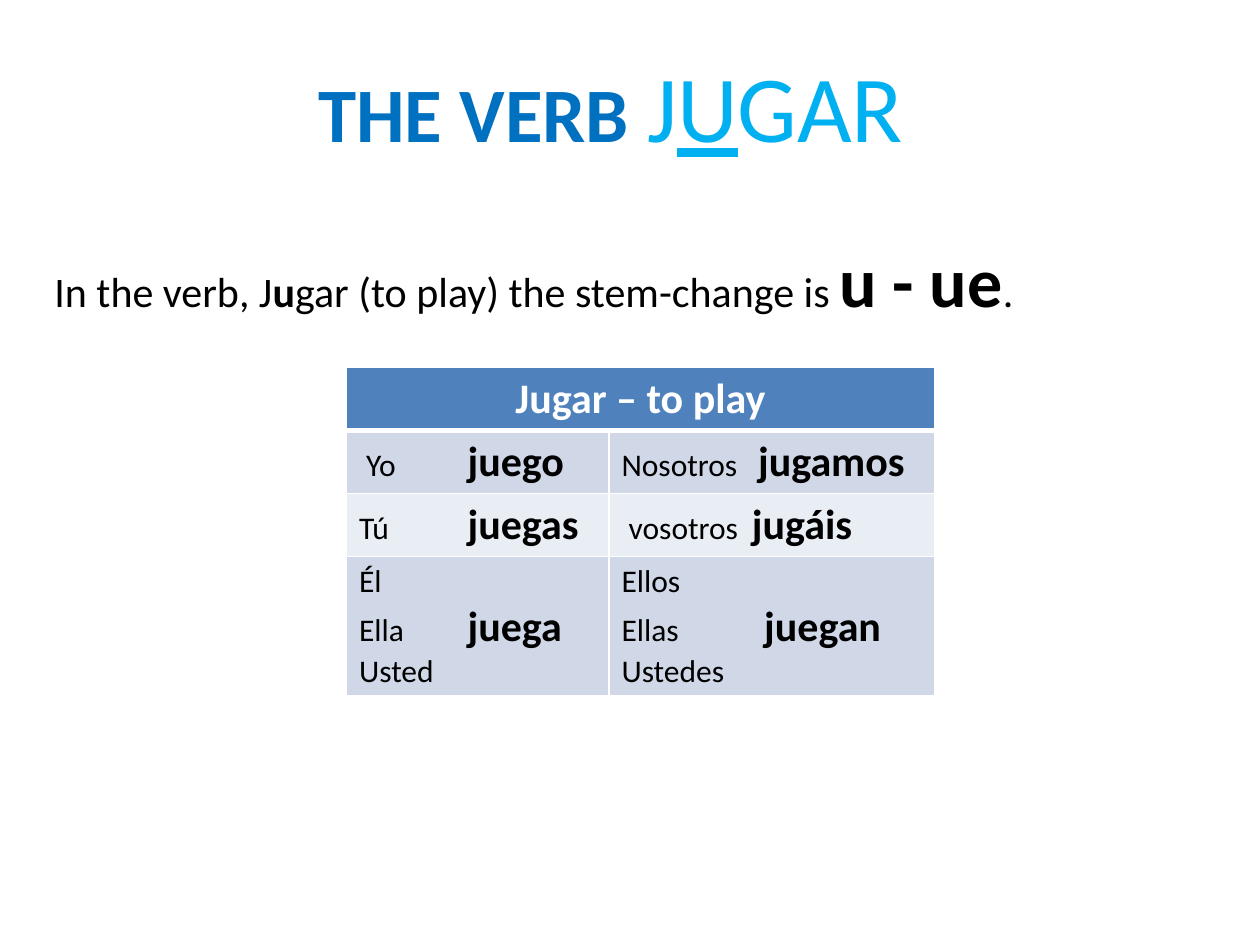
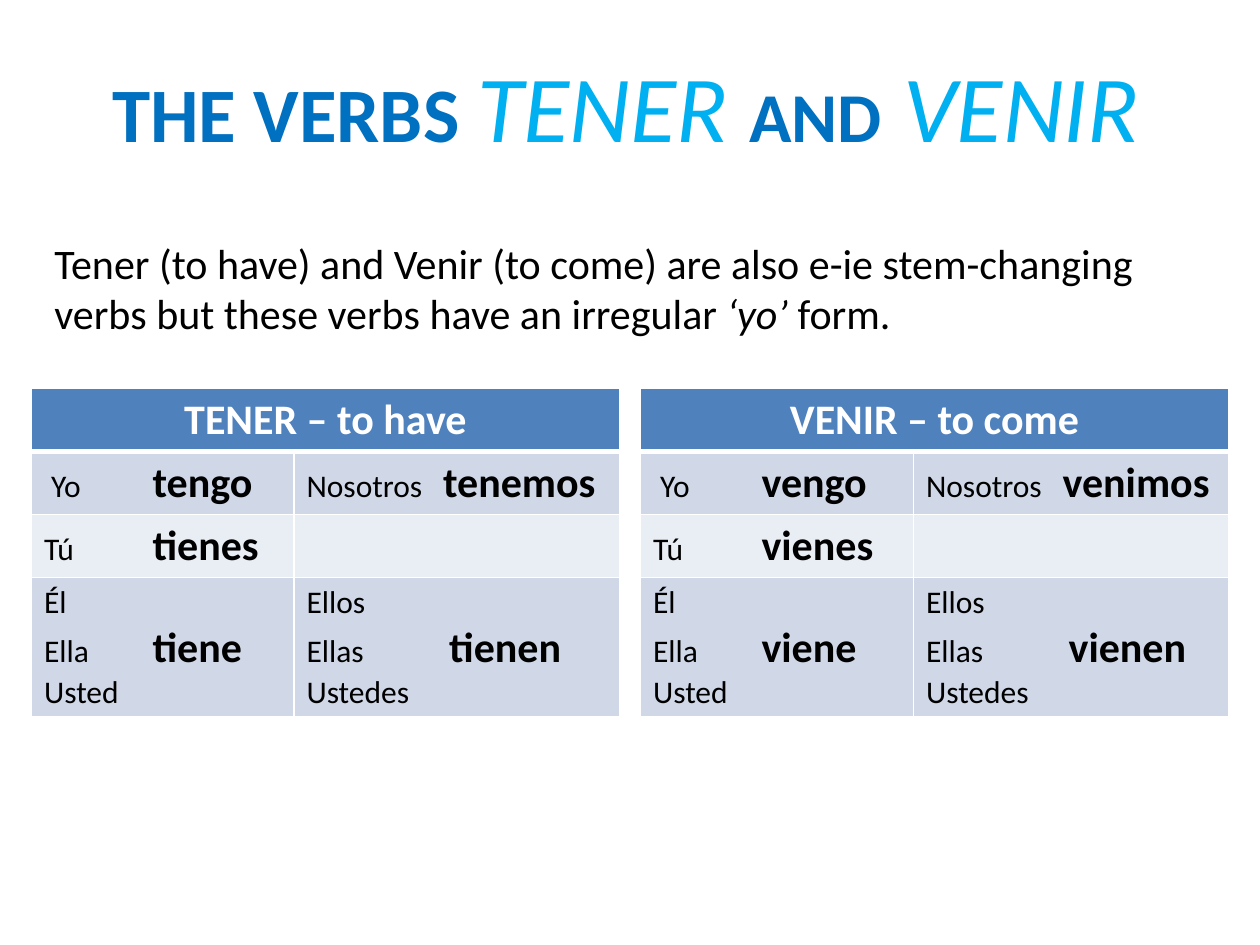
import lxml.etree
import pptx
import pptx.dml.color
import pptx.enum.text
import pptx.oxml.ns
import pptx.util

Pt = pptx.util.Pt
RGBColor = pptx.dml.color.RGBColor
ALIGN = pptx.enum.text.PP_ALIGN

BLACK = RGBColor(0x00, 0x00, 0x00)
WHITE = RGBColor(0xFF, 0xFF, 0xFF)
TITLE_BLUE = RGBColor(0x00, 0x70, 0xC0)
VERB_BLUE = RGBColor(0x00, 0xB0, 0xF0)
HEADER_BLUE = RGBColor(0x4F, 0x81, 0xBD)
BAND_DARK = RGBColor(0xD0, 0xD8, 0xE8)
BAND_LIGHT = RGBColor(0xE9, 0xED, 0xF4)

FONT = "Calibri"
BODY_SIZE, PRONOUN_SIZE, VERB_SIZE = 24, 18, 24
ROW_HEIGHTS = (36, 36, 36, 79)
BAND_FILLS = (BAND_DARK, BAND_LIGHT, BAND_DARK)
PRONOUNS = (
    ((" Yo",), ("Nosotros",)),
    (("Tú",), (" vosotros",)),
    (("Él", "Ella", "Usted"), ("Ellos", "Ellas", "Ustedes")),
)
# Where each verb form starts, measured from the left of its cell's text
VERB_STOPS = ((62, 78), (62, 74.5), (62, 81.5))


def add_child(parent, tag, **attributes):
    return lxml.etree.SubElement(parent, pptx.oxml.ns.qn(tag), attributes)


class VerbDeck:
    """Holds the deck's style and the slide being filled."""

    def __init__(self):
        self.deck = pptx.Presentation()
        self.deck.slide_width = Pt(720)
        self.deck.slide_height = Pt(540)
        self.slide = None

    def new_slide(self):
        self.slide = self.deck.slides.add_slide(self.deck.slide_layouts[6])

    def fill_paragraph(self, para, spans, size, color=BLACK, bold=None,
                       align=ALIGN.LEFT):
        """Fill a paragraph with (text, font overrides) spans."""
        para.alignment = align
        para.font.name = FONT
        para.font.size = Pt(size)
        para.font.color.rgb = color
        para.font.bold = bold
        for text, overrides in spans:
            span = para.add_run()
            span.text = text
            for name, value in overrides.items():
                if name == "color":
                    span.font.color.rgb = value
                else:
                    setattr(span.font, name, value)

    def text_box(self, left, top, width, height, wrap):
        box = self.slide.shapes.add_textbox(Pt(left), Pt(top), Pt(width), Pt(height))
        box.text_frame.word_wrap = wrap
        return box.text_frame.paragraphs[0]

    def title(self, left, width, spans):
        para = self.text_box(left, 24, width, 73, wrap=False)
        self.fill_paragraph(para, spans, 44, TITLE_BLUE, align=ALIGN.CENTER)

    def explanation(self, height, spans):
        para = self.text_box(24, 132, 678, height, wrap=True)
        self.fill_paragraph(para, spans, BODY_SIZE)

    def style_cell(self, cell, fill, top=1, bottom=1):
        """Fill a cell and give it white borders of the given widths."""
        properties = cell._tc.get_or_add_tcPr()
        for side, width in (("L", 1), ("R", 1), ("T", top), ("B", bottom)):
            line = add_child(properties, f"a:ln{side}", w=str(Pt(width)))
            solid = add_child(line, "a:solidFill")
            add_child(solid, "a:srgbClr", val=str(WHITE))
        cell.fill.solid()
        cell.fill.fore_color.rgb = fill

    def conjugation_cell(self, cell, pronouns, form, stop):
        """List the pronouns, with the verb form beside the middle one."""
        frame = cell.text_frame
        for index, pronoun in enumerate(pronouns):
            para = frame.add_paragraph() if index else frame.paragraphs[0]
            spans = [(pronoun, {})]
            if index == len(pronouns) // 2:
                spans = [(pronoun + "\t", {}),
                         (form, {"size": Pt(VERB_SIZE), "bold": True})]
            self.fill_paragraph(para, spans, PRONOUN_SIZE)
            if len(spans) > 1:
                tabs = lxml.etree.Element(pptx.oxml.ns.qn("a:tabLst"))
                add_child(tabs, "a:tab", pos=str(Pt(stop)), algn="l")
                para._p.get_or_add_pPr().insert(0, tabs)

    def conjugation_table(self, left, top, heading, forms, widths=(150, 186)):
        """Draw a heading row over rows of singular and plural forms."""
        table = self.slide.shapes.add_table(
            len(ROW_HEIGHTS), len(widths), Pt(left), Pt(top),
            Pt(sum(widths)), Pt(sum(ROW_HEIGHTS))).table
        for column, width in zip(table.columns, widths):
            column.width = Pt(width)
        for row, height in zip(table.rows, ROW_HEIGHTS):
            row.height = Pt(height)

        header = table.cell(0, 0)
        header.merge(table.cell(0, 1))
        for column in range(len(widths)):
            self.style_cell(table.cell(0, column), HEADER_BLUE, bottom=3)
        self.fill_paragraph(header.text_frame.paragraphs[0], [(heading, {})],
                            VERB_SIZE, WHITE, bold=True, align=ALIGN.CENTER)

        for row, row_forms in enumerate(forms):
            for column, form in enumerate(row_forms):
                cell = table.cell(row + 1, column)
                self.style_cell(cell, BAND_FILLS[row], top=1 if row else 3)
                if form:
                    self.conjugation_cell(cell, PRONOUNS[row][column], form,
                                          VERB_STOPS[row][column])


def main():
    verbs = VerbDeck()
    heavy = {"bold": True}
    big = {"size": Pt(54), "color": VERB_BLUE}
    big_italic = {**big, "italic": True}

    verbs.new_slide()
    verbs.explanation(114, [
        ("In the verb, J", {}), ("u", heavy),
        ("gar (to play) the stem-change is ", {}),
        ("u - ue", {"size": Pt(40), **heavy}), (".", {})])
    verbs.title(168, 362, [
        ("THE VERB ", heavy), ("J", big),
        ("U", {**big, "underline": True}), ("GAR", big)])
    verbs.conjugation_table(198, 210, "Jugar – to play", (
        ("juego", "jugamos"), ("juegas", "jugáis"), ("juega", "juegan")))

    verbs.new_slide()
    verbs.explanation(124, [
        ("Tener (to have) and Venir (to come) are also e-ie stem-changing "
         "verbs but these verbs have an irregular ", {}),
        ("‘yo’", {"italic": True}), (" form.", {})])
    verbs.title(54, 607, [
        ("THE VERBS ", heavy), ("TENER ", big_italic),
        ("AND", {"size": Pt(40), **heavy}),
        (" ", {"size": Pt(54), **heavy}), ("VENIR", big_italic)])
    verbs.conjugation_table(18, 222, "TENER – to have", (
        ("tengo", "tenemos"), ("tienes", None), ("tiene", "tienen")))
    verbs.conjugation_table(366, 222, "VENIR – to come", (
        ("vengo", "venimos"), ("vienes", None), ("viene", "vienen")),
        widths=(156, 180))

    verbs.deck.save("out.pptx")


if __name__ == "__main__":
    main()
